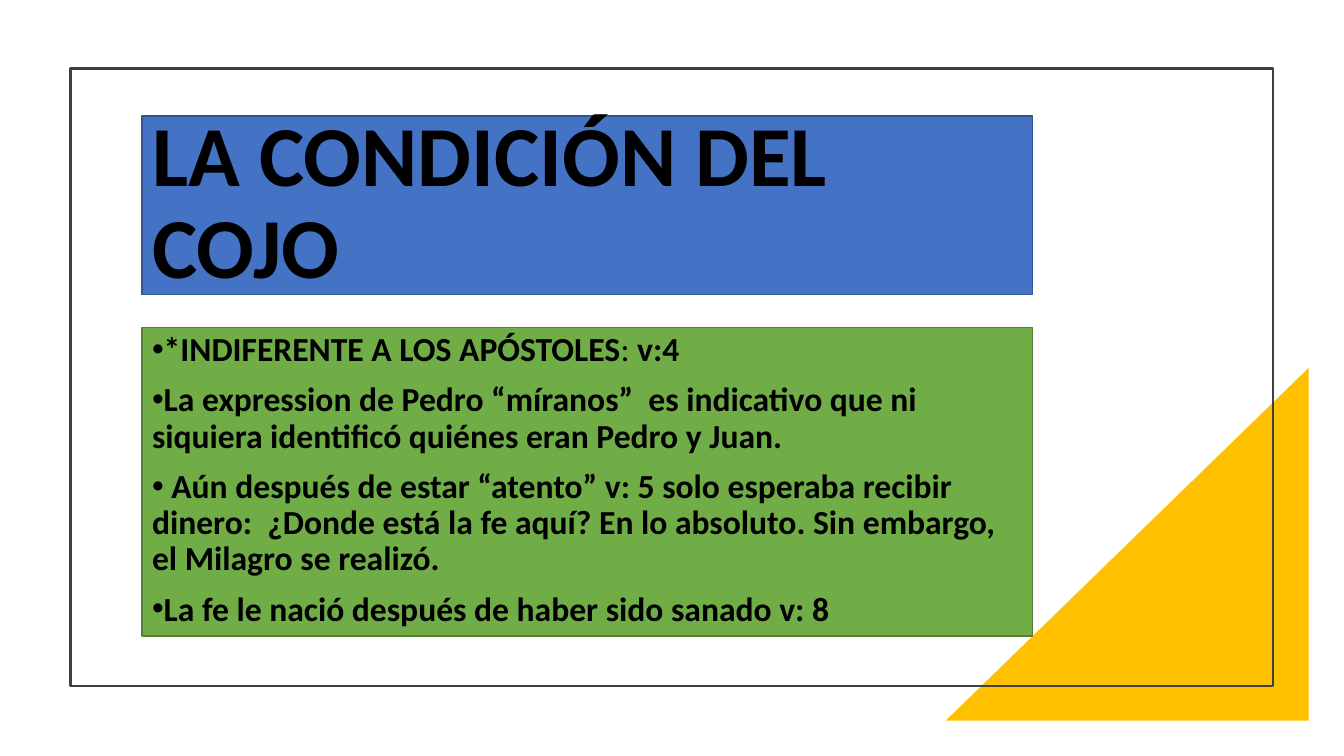
from lxml import etree
from pptx import Presentation
from pptx.dml.color import RGBColor
from pptx.enum.shapes import MSO_SHAPE
from pptx.enum.text import MSO_ANCHOR, MSO_AUTO_SIZE, PP_ALIGN
from pptx.oxml.ns import qn
from pptx.util import Inches, Pt

RECT, TRIANGLE = MSO_SHAPE.RECTANGLE, MSO_SHAPE.RIGHT_TRIANGLE
LEFT = PP_ALIGN.LEFT
TOP, MIDDLE = MSO_ANCHOR.TOP, MSO_ANCHOR.MIDDLE
NO_FIT = MSO_AUTO_SIZE.NONE
TITLE_ONLY = 5

TITLE = "LA CONDICIÓN DEL COJO"
# Each paragraph is a list of (text, bold) runs
POINTS = [
    [("*INDIFERENTE A LOS APÓSTOLES", True), (": ", False), ("v:4", True)],
    [("La expression de Pedro “míranos”  es indicativo que ni siquiera "
      "identificó quiénes eran Pedro y Juan.", True)],
    [(" Aún después de estar “atento” v: 5 solo esperaba recibir dinero:  "
      "¿Donde está la fe aquí? En lo absoluto. Sin embargo, el Milagro se "
      "realizó.", True)],
    [("La fe le nació después de haber sido sanado v: 8", True)],
]


def rgb(value):
    return RGBColor.from_string(value)


class SlideBuilder:
    font = "Calibri"
    text_color = "000000"

    def __init__(self, slide):
        self.slide = slide

    def paint(self, sp, fill=None, line=None, width=1):
        if fill:
            sp.fill.solid()
            sp.fill.fore_color.rgb = rgb(fill)
        else:
            sp.fill.background()
        if line:
            sp.line.color.rgb = rgb(line)
            sp.line.width = Pt(width)
        else:
            sp.line.fill.background()

    def shape(self, kind, box, flip=False, **paint):
        sp = self.slide.shapes.add_shape(kind, *map(Inches, box))
        sp.shadow.inherit = False
        self.paint(sp, **paint)
        if flip:
            sp._element.spPr.find(qn("a:xfrm")).set("flipH", "1")
        return sp

    def title(self, text, box, size, **paint):
        sp = self.slide.shapes.title
        sp.left, sp.top, sp.width, sp.height = map(Inches, box)
        self.paint(sp, **paint)
        self.set_text(sp, [[(text, True)]], size, MIDDLE)

    def bullets(self, points, box, size, **paint):
        sp = self.shape(RECT, box, **paint)
        self.set_text(sp, points, size, TOP, space_before=10)
        for p in sp.text_frame.paragraphs:
            pPr = p._p.get_or_add_pPr()
            pPr.set("marL", "0")
            pPr.set("indent", str(-Inches(0.25)))
            etree.SubElement(pPr, qn("a:buFont")).set("typeface", "Arial")
            etree.SubElement(pPr, qn("a:buChar")).set("char", "•")

    def set_text(self, sp, paragraphs, size, anchor, space_before=0):
        tf = sp.text_frame
        tf.word_wrap = True
        tf.auto_size = NO_FIT
        tf.vertical_anchor = anchor
        for i, runs in enumerate(paragraphs):
            p = tf.add_paragraph() if i else tf.paragraphs[0]
            p.alignment = LEFT
            p.line_spacing = 0.9
            p.space_before = Pt(space_before)
            for text, bold in runs:
                r = p.add_run()
                r.text = text
                r.font.name = self.font
                r.font.size = Pt(size)
                r.font.bold = bold
                r.font.color.rgb = rgb(self.text_color)


def main():
    prs = Presentation()
    prs.slide_width, prs.slide_height = Inches(13.33), Inches(7.5)
    s = SlideBuilder(prs.slides.add_slide(prs.slide_layouts[TITLE_ONLY]))

    # Corner triangle and thin frame
    s.shape(TRIANGLE, (9.38, 3.65, 3.6, 3.5), flip=True, fill="FFC000")
    s.shape(RECT, (0.7, 0.68, 11.93, 6.13), line="404040", width=1.5)

    # Title and points share the same column
    left, width = 1.41, 8.83
    s.title(TITLE, (left, 1.15, width, 1.77), 61, fill="4472C4", line="325491")
    s.bullets(POINTS, (left, 3.25, width, 3.06), 24,
              fill="70AD47", line="538035")

    prs.save("out.pptx")


if __name__ == "__main__":
    main()
